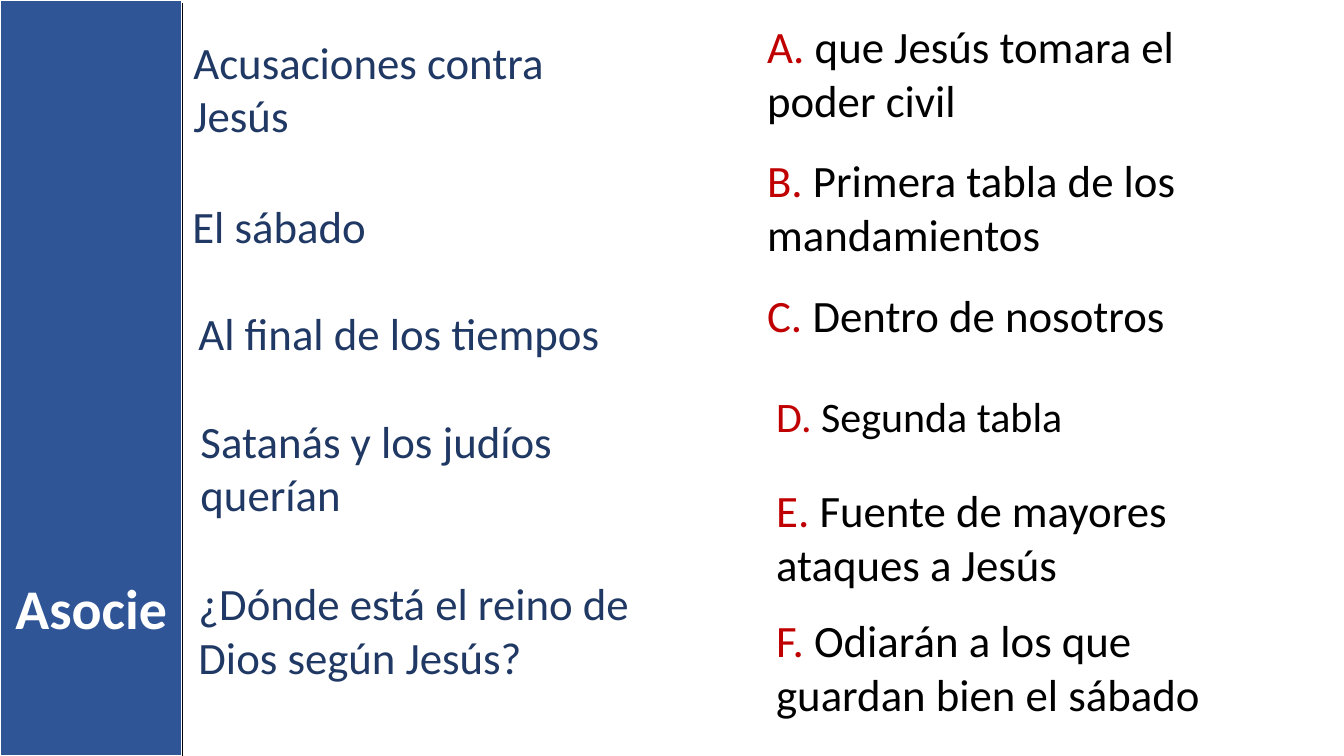
"""Build a matching exercise slide: prompts on the left, lettered answers on the right."""
import pptx
import pptx.dml.color
import pptx.enum.shapes
import pptx.enum.text
import pptx.oxml.ns
import pptx.util
from lxml import etree

Inches = pptx.util.Inches

THEME = {
    "font": "Calibri",
    "band": "2F5597",
    "prompt": "203864",
    "letter": "C00000",
    "answer": "000000",
    "rule": "000000",
    "white": "FFFFFF",
    "body": 32,
    "small": 30,
    "title": 40,
}

SLIDE_WIDTH, SLIDE_HEIGHT = 13.33, 7.5
BAND_WIDTH = 1.81
RULE_TOP = 0.03
LINE_HEIGHT = {1: 0.64, 2: 1.18}

TITLE = ("Asocie", 5.64, 0.77)

PROMPTS = [
    ("Acusaciones contra Jesús", 1.82, 0.29, 4.35, 2),
    ("El sábado", 1.81, 1.92, 4.94, 1),
    ("Al final de los tiempos", 1.87, 2.98, 5.1, 1),
    ("Satanás y los judíos querían", 1.89, 4.05, 4.94, 2),
    ("¿Dónde está el reino de Dios según Jesús?", 1.87, 5.66, 4.77, 2),
]

ANSWERS = [
    ("A", "que Jesús tomara el poder civil", 7.51, 0.14, 5.04, 2, "body"),
    ("B", "Primera tabla de los mandamientos", 7.51, 1.47, 5.29, 2, "body"),
    ("C", "Dentro de nosotros", 7.51, 2.81, 4.88, 1, "body"),
    ("D", "Segunda tabla", 7.6, 3.83, 5.29, 1, "small"),
    ("E", "Fuente de mayores ataques a Jesús", 7.6, 4.74, 5.53, 2, "body"),
    ("F", "Odiarán a los que guardan bien el sábado", 7.6, 6.03, 4.97, 2, "body"),
]


def color(name):
    return pptx.dml.color.RGBColor.from_string(THEME[name])


def add_text(slide, box, runs, size):
    """Add a wrapped text box of (text, color name) runs and return its paragraph."""
    frame = slide.shapes.add_textbox(*map(Inches, box)).text_frame
    frame.word_wrap = True
    frame.auto_size = pptx.enum.text.MSO_AUTO_SIZE.SHAPE_TO_FIT_TEXT
    paragraph = frame.paragraphs[0]
    paragraph.font.name = THEME["font"]
    paragraph.font.size = pptx.util.Pt(THEME[size])
    for text, color_name in runs:
        run = paragraph.add_run()
        run.text = text
        run.font.color.rgb = color(color_name)
    return paragraph


def add_band(slide):
    band = slide.shapes.add_shape(
        pptx.enum.shapes.MSO_SHAPE.RECTANGLE,
        0, 0, Inches(BAND_WIDTH), Inches(SLIDE_HEIGHT),
    )
    band.shadow.inherit = False
    band.fill.solid()
    band.fill.fore_color.rgb = color("band")
    band.line.color.rgb = color("white")
    band.line.width = pptx.util.Pt(1.5)


def add_rule(slide):
    rule = slide.shapes.add_connector(
        pptx.enum.shapes.MSO_CONNECTOR.STRAIGHT,
        Inches(BAND_WIDTH), Inches(RULE_TOP), Inches(BAND_WIDTH), Inches(SLIDE_HEIGHT),
    )
    rule.line.color.rgb = color("rule")
    rule.line.width = pptx.util.Pt(1)
    etree.SubElement(rule._element.spPr, pptx.oxml.ns.qn("a:effectLst"))


def main():
    deck = pptx.Presentation()
    deck.slide_width = Inches(SLIDE_WIDTH)
    deck.slide_height = Inches(SLIDE_HEIGHT)
    slide = deck.slides.add_slide(deck.slide_layouts[6])

    add_band(slide)
    for prompt, left, top, width, lines in PROMPTS:
        box = (left, top, width, LINE_HEIGHT[lines])
        add_text(slide, box, [(prompt, "prompt")], "body")
    for letter, answer, left, top, width, lines, size in ANSWERS:
        box = (left, top, width, LINE_HEIGHT[lines])
        add_text(slide, box, [(f"{letter}. ", "letter"), (answer, "answer")], size)

    title, title_top, title_height = TITLE
    heading = add_text(
        slide, (0, title_top, BAND_WIDTH, title_height), [(title, "white")], "title"
    )
    heading.alignment = pptx.enum.text.PP_ALIGN.CENTER
    heading.font.bold = True
    add_rule(slide)

    deck.save("out.pptx")


if __name__ == "__main__":
    main()
